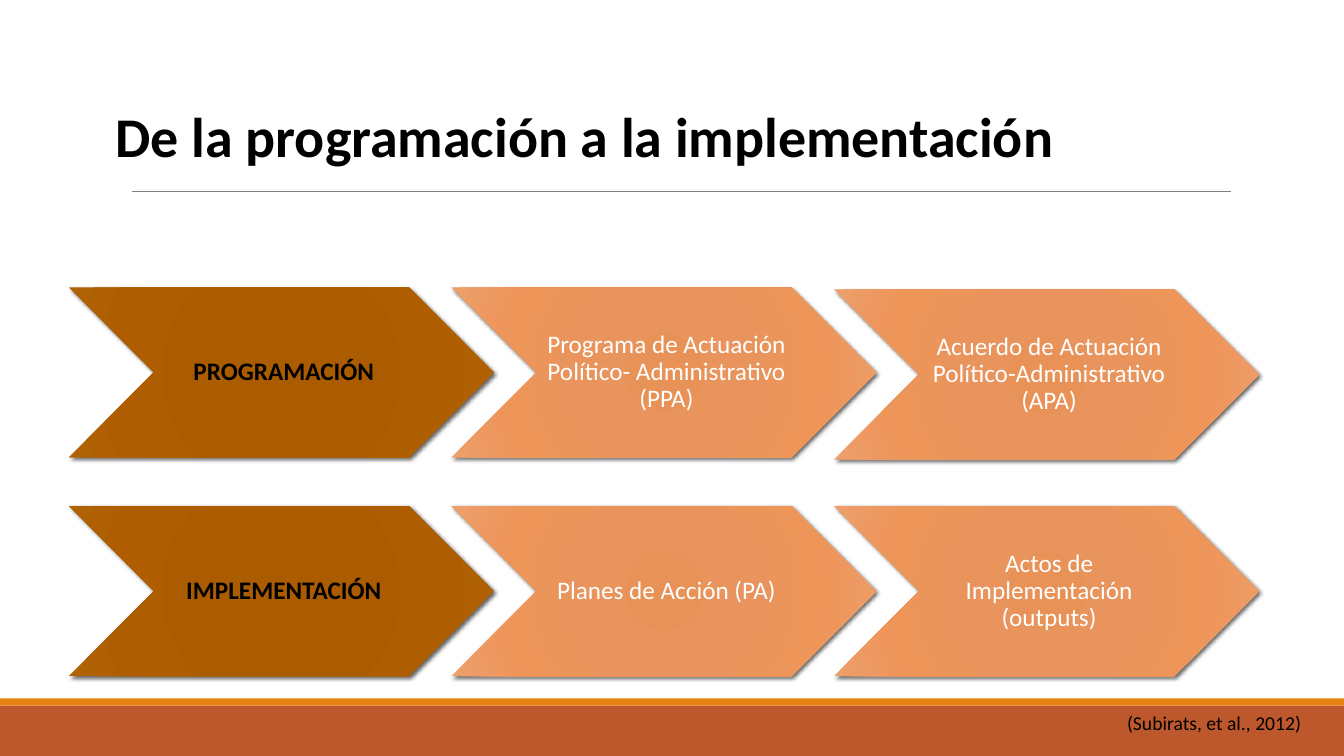
from dataclasses import dataclass

from lxml import etree
from pptx import Presentation
from pptx import util as u
from pptx.dml.color import RGBColor
from pptx.enum import shapes, text
from pptx.oxml import parse_xml
from pptx.oxml.ns import nsdecls, qn

SLIDE_W, SLIDE_H = 13.33, 7.5
GRID_LEFT, GRID_TOP = 0.68, 2.85
COLUMN, ROW = 3.795, 2.17
CHEVRON_W, CHEVRON_H = 4.22, 1.69
FONT = "Calibri"
BROWN = ((0, "AA5B00"), (34, "AB5C00"), (70, "AE5E00"), (100, "B06206"))
ORANGE = ((0, "E89258"), (34, "E8945C"), (70, "EE955A"), (100, "ED9F6B"))


@dataclass(frozen=True)
class Step:
    label: str
    column: int
    row: int
    drop: float = 0

    @property
    def is_phase(self) -> bool:
        return self.column == 0


STEPS = (
    Step("PROGRAMACIÓN", 0, 0),
    Step("Programa de Actuación Político- Administrativo (PPA)", 1, 0),
    Step("Acuerdo de Actuación Político-Administrativo (APA)", 2, 0, drop=0.02),
    Step("IMPLEMENTACIÓN", 0, 1),
    Step("Planes de Acción (PA)", 1, 1),
    Step("Actos de Implementación (outputs)", 2, 1),
)


def color(value: str) -> RGBColor:
    return RGBColor.from_string(value)


def inches(*lengths: float) -> list:
    return [u.Inches(length) for length in lengths]


def shadow_effect(alpha: int = 60, blur: float = 3, distance: float = 2):
    return parse_xml(
        f'<a:effectLst {nsdecls("a")}><a:outerShdw blurRad="{u.Pt(blur)}" '
        f'dist="{u.Pt(distance)}" dir="2700000" algn="tl" rotWithShape="0">'
        f'<a:srgbClr val="000000"><a:alpha val="{alpha * 1000}"/></a:srgbClr>'
        '</a:outerShdw></a:effectLst>')


def write(frame, content: str, *, size: float, hue: str = "000000", bold: bool = False,
          align=text.PP_ALIGN.LEFT, anchor=text.MSO_ANCHOR.TOP, wrap: bool = True,
          spacing: float = 1, insets=(0.1, 0.05, 0.1, 0.05), shadow: bool = False) -> None:
    frame.word_wrap = wrap
    frame.vertical_anchor = anchor
    (frame.margin_left, frame.margin_top,
     frame.margin_right, frame.margin_bottom) = inches(*insets)
    paragraph = frame.paragraphs[0]
    paragraph.alignment = align
    paragraph.line_spacing = spacing
    run = paragraph.add_run()
    run.text = content
    font = run.font
    font.name, font.size, font.bold = FONT, u.Pt(size), bold
    font.color.rgb = color(hue)
    if shadow:
        run._r.rPr.find(qn("a:solidFill")).addnext(shadow_effect())


def add_band(slide, top: float, height: float, hue: str) -> None:
    band = slide.shapes.add_shape(shapes.MSO_SHAPE.RECTANGLE,
                                  *inches(0, top, SLIDE_W, height))
    band.shadow.inherit = False
    band.fill.solid()
    band.fill.fore_color.rgb = color(hue)
    band.line.fill.background()


def add_title_rule(slide) -> None:
    rule = slide.shapes.add_connector(shapes.MSO_CONNECTOR.STRAIGHT,
                                      *inches(1.31, 1.9, 12.21, 1.9))
    rule.line.color.rgb = color("808080")
    rule.line.width = u.Pt(0.5)
    etree.SubElement(rule._element.spPr, qn("a:effectLst"))


def fill_radially(shape, stops) -> None:
    shape.fill.gradient()
    properties = shape._element.spPr
    gradient_stops = "".join(
        f'<a:gs pos="{position * 1000}"><a:srgbClr val="{hue}"/></a:gs>'
        for position, hue in stops)
    properties.replace(properties.find(qn("a:gradFill")), parse_xml(
        f'<a:gradFill {nsdecls("a")} rotWithShape="1"><a:gsLst>{gradient_stops}</a:gsLst>'
        '<a:path path="circle"><a:fillToRect l="100000" t="100000" r="100000" b="100000"/>'
        '</a:path></a:gradFill>'))


def add_step(slide, step: Step) -> None:
    chevron = slide.shapes.add_shape(
        shapes.MSO_SHAPE.CHEVRON,
        *inches(GRID_LEFT + step.column * COLUMN, GRID_TOP + step.row * ROW + step.drop,
                CHEVRON_W, CHEVRON_H))
    fill_radially(chevron, BROWN if step.is_phase else ORANGE)
    chevron.line.fill.background()
    chevron.shadow.inherit = False
    properties = chevron._element.spPr
    properties.replace(properties.find(qn("a:effectLst")), shadow_effect())
    write(chevron.text_frame, step.label, size=18, bold=step.is_phase,
          hue="000000" if step.is_phase else "FFFFFF", spacing=0.9,
          align=text.PP_ALIGN.CENTER, anchor=text.MSO_ANCHOR.MIDDLE,
          insets=(0.08, 0.03, 0.03, 0.03))


def main() -> None:
    deck = Presentation()
    deck.slide_width, deck.slide_height = inches(SLIDE_W, SLIDE_H)
    slide = deck.slides.add_slide(deck.slide_layouts[6])

    add_band(slide, 7, 0.5, "BD582C")
    add_band(slide, 6.93, 0.07, "E48312")
    add_title_rule(slide)

    title = slide.shapes.add_textbox(*inches(1.05, 0.66, 11.56, 1.06))
    write(title.text_frame, "De la programación a la implementación", size=40,
          bold=True, anchor=text.MSO_ANCHOR.BOTTOM, shadow=True)

    for step in STEPS:
        add_step(slide, step)

    citation = slide.shapes.add_textbox(*inches(11.08, 7, 2.2, 0.34))
    write(citation.text_frame, "(Subirats, et al., 2012)", size=14, wrap=False)
    citation.text_frame.auto_size = text.MSO_AUTO_SIZE.SHAPE_TO_FIT_TEXT

    deck.save("out.pptx")


if __name__ == "__main__":
    main()
